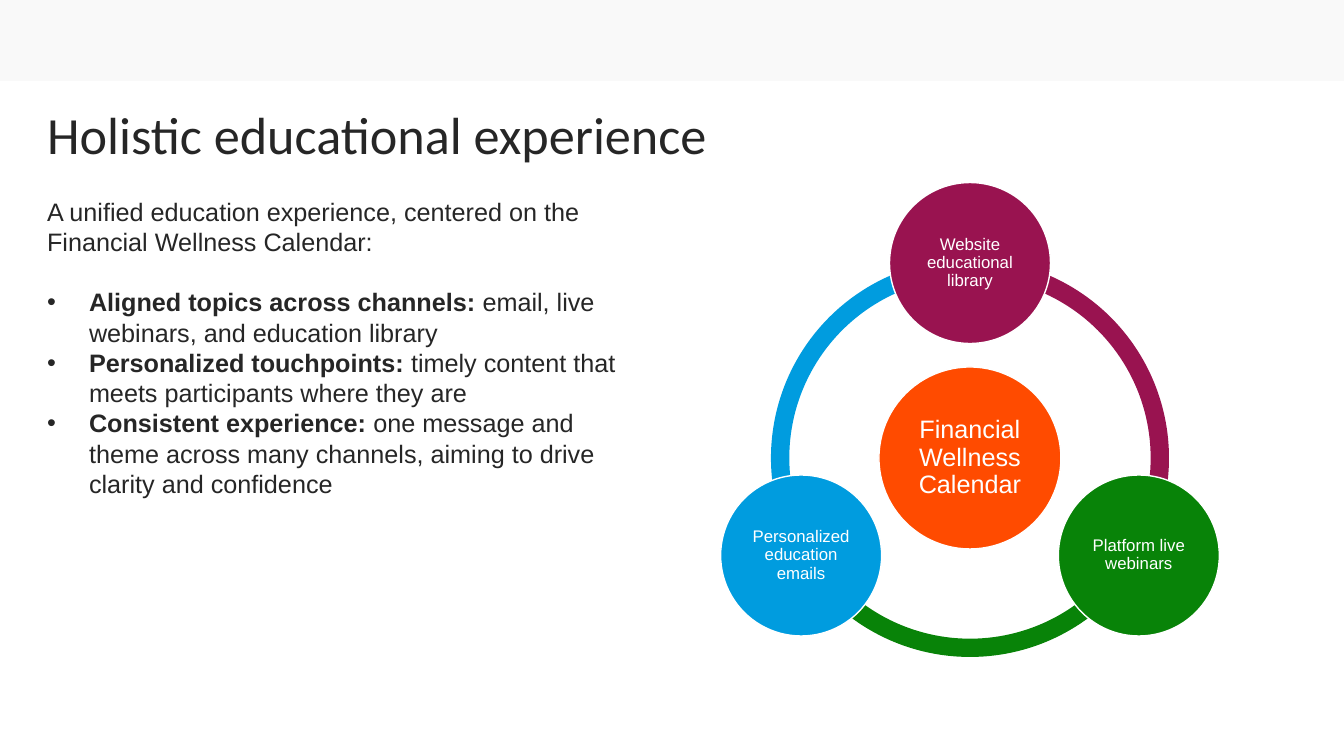
import math
import pptx
import pptx.util
import pptx.dml.color
import pptx.enum.shapes
import pptx.enum.text
import pptx.oxml.ns
import lxml.etree

PX = 914400 / 100.8
RGB = pptx.dml.color.RGBColor
INK = RGB(0x26, 0x26, 0x26)
WHITE = RGB(0xFF, 0xFF, 0xFF)
BAND = RGB(0xF9, 0xF9, 0xF9)
PLUM = RGB(0x99, 0x13, 0x50)
GREEN = RGB(0x08, 0x83, 0x08)
BLUE = RGB(0x00, 0x9C, 0xDF)
ORANGE = RGB(0xFF, 0x4B, 0x00)
KIND = pptx.enum.shapes.MSO_SHAPE
ALIGN = pptx.enum.text.PP_ALIGN
ANCHOR = pptx.enum.text.MSO_ANCHOR
Pt = pptx.util.Pt


def px(n):
    return round(n * PX)


def add(kind, x, y, w, h, fill):
    shape = slide.shapes.add_shape(kind, px(x), px(y), px(w), px(h))
    shape.shadow.inherit = False
    shape.fill.solid()
    shape.fill.fore_color.rgb = fill
    shape.line.fill.background()
    return shape


deck = pptx.Presentation()
deck.slide_width, deck.slide_height = px(1344), px(756)
slide = deck.slides.add_slide(deck.slide_layouts[1])
add(KIND.RECTANGLE, 0, 0, 1344, 81, BAND)

# Title and body
title, body = slide.placeholders
for holder, box in ((title, (37, 103, 1072, 69)), (body, (37, 191, 591, 346))):
    for name, n in zip(("left", "top", "width", "height"), box):
        setattr(holder, name, px(n))
    holder.text_frame.auto_size = pptx.enum.text.MSO_AUTO_SIZE.NONE

title.text_frame.text = "Holistic educational experience"
head = title.text_frame.paragraphs[0]
head.alignment = ALIGN.LEFT
head.line_spacing = 0.9
for name, value in {"name": "Calibri", "size": Pt(37.3)}.items():
    setattr(head.font, name, value)
head.font.color.rgb = INK

points = [
    ("", "A unified education experience, centered on the Financial Wellness Calendar:"),
    ("Aligned topics across channels:", " email, live webinars, and education library"),
    ("Personalized touchpoints:", " timely content that meets participants where they are"),
    ("Consistent experience:", " one message and theme across many channels, "
     "aiming to drive clarity and confidence"),
]
frame = body.text_frame
for i, (lead, rest) in enumerate(points):
    para = frame.add_paragraph() if i else frame.paragraphs[0]
    props = para._p.get_or_add_pPr()
    dent = px(42) if lead else 0
    props.set("marL", str(dent))
    props.set("indent", str(-dent))
    mark = lxml.etree.SubElement(props, pptx.oxml.ns.qn("a:buChar" if lead else "a:buNone"))
    if lead:
        mark.set("char", "•")
    para.line_spacing = Pt(21.6)
    para.space_before = Pt(21.6 if i == 1 else 0)
    for text, bold in ((lead, True), (rest, False)):
        if text:
            run = para.add_run()
            run.text = text
            for name, value in {"name": "Arial", "size": Pt(18), "bold": bold}.items():
                setattr(run.font, name, value)
            run.font.color.rgb = INK

# Ring: each arc starts at the disc of its own colour and runs clockwise
MID_X, MID_Y, RING, ORBIT = 970, 458, 398, 195
nodes = [
    (270, PLUM, "Website educational library"),
    (30, GREEN, "Platform live webinars"),
    (150, BLUE, "Personalized education emails"),
]
discs = [(MID_X, MID_Y, 182, ORANGE, "Financial Wellness Calendar", 18, 3)]
for angle, fill, label in nodes:
    arc = add(KIND.BLOCK_ARC, MID_X - RING / 2, MID_Y - RING / 2, RING, RING, fill)
    arc.adjustments[0] = angle * 0.6
    arc.adjustments[1] = (angle + 120) % 360 * 0.6
    arc.adjustments[2] = 0.046
    turn = math.radians(angle)
    discs.append((MID_X + ORBIT * math.cos(turn), MID_Y + ORBIT * math.sin(turn),
                  161, fill, label, 12, 2))

for x, y, size, fill, label, points_size, inset in discs:
    disc = add(KIND.OVAL, x - size / 2, y - size / 2, size, size, fill)
    disc.line.color.rgb = WHITE
    disc.line.width = Pt(1)
    frame = disc.text_frame
    for name in ("left", "top", "right", "bottom"):
        setattr(frame, "margin_" + name, px(inset))
    frame.word_wrap = True
    frame.vertical_anchor = ANCHOR.MIDDLE
    frame.text = label
    para = frame.paragraphs[0]
    para.alignment = ALIGN.CENTER
    para.line_spacing = 0.9
    for name, value in {"name": "Arial", "size": Pt(points_size)}.items():
        setattr(para.font, name, value)
    para.font.color.rgb = WHITE

deck.save("out.pptx")
